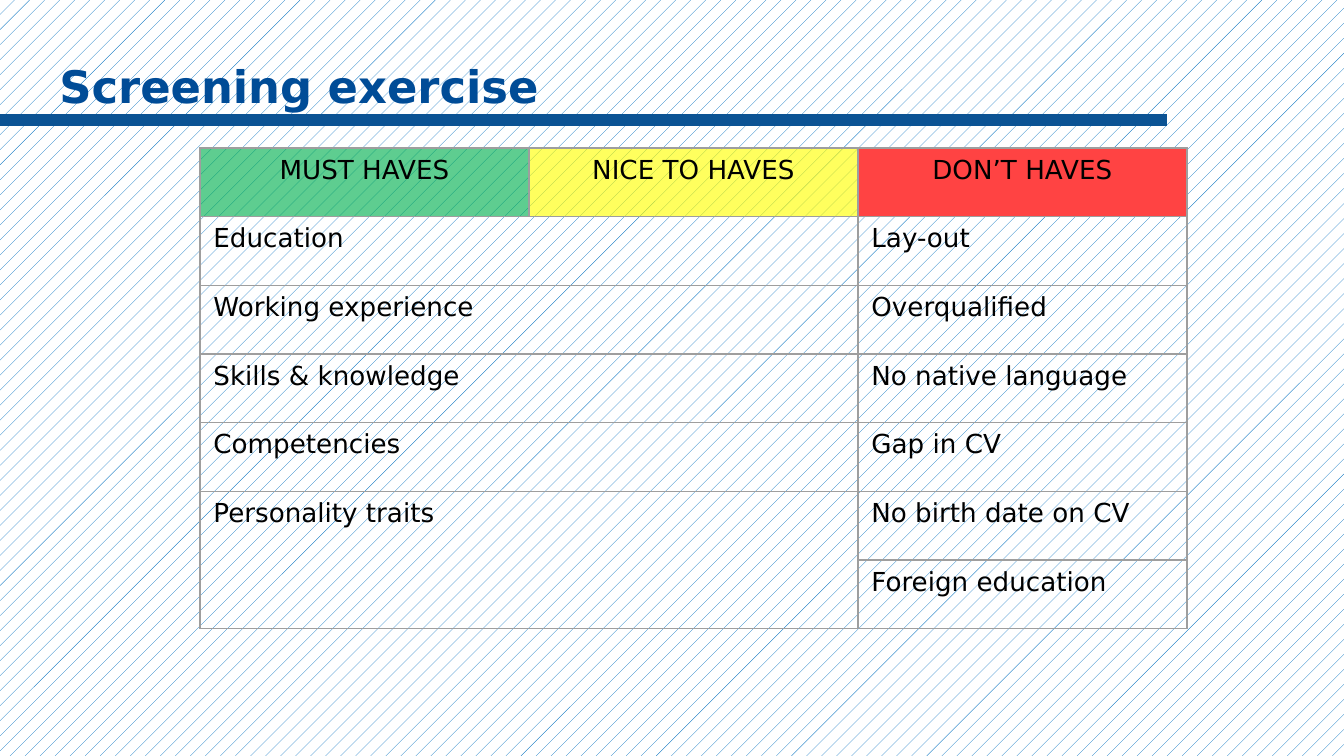
"""Build the screening exercise slide with its table of haves."""
import lxml.etree
import pptx
import pptx.dml.color
import pptx.enum.dml
import pptx.enum.shapes
import pptx.enum.text
import pptx.oxml.ns
import pptx.util

EMU_PER_PX = 914400 / 134.4
FONT = "DejaVu Sans"
COLOURS = {
    "title": "004C97",
    "rule": "0B5394",
    "hatch": "0070C0",
    "paper": "FFFFFF",
    "text": "000000",
    "border": "9E9E9E",
    "must": "00B050",
    "nice": "FFFF00",
    "dont": "FF4343",
}
HEADERS = [("MUST HAVES", "must", 63), ("NICE TO HAVES", "nice", 63), ("DON’T HAVES", "dont", 100)]
WANTED = ["Education", "Working experience", "Skills & knowledge", "Competencies", "Personality traits"]
UNWANTED = ["Lay-out", "Overqualified", "No native language", "Gap in CV", "No birth date on CV",
            "Foreign education"]


def px(length):
    """Turn px into EMU."""
    return pptx.util.Emu(round(length * EMU_PER_PX))


def rgb(name):
    """Look up a named colour."""
    return pptx.dml.color.RGBColor.from_string(COLOURS[name])


def add_xml(parent, tag, **attributes):
    """Append a drawing element to its parent."""
    element = lxml.etree.SubElement(parent, pptx.oxml.ns.qn(tag))
    for key, value in attributes.items():
        element.set(key, str(value))
    return element


def write(text_frame, text, size, colour, bold=False, align=pptx.enum.text.PP_ALIGN.LEFT):
    """Set one formatted paragraph."""
    text_frame.text = text
    paragraph = text_frame.paragraphs[0]
    paragraph.alignment = align
    font = paragraph.runs[0].font
    font.name, font.size, font.bold = FONT, pptx.util.Pt(size), bold
    font.color.rgb = rgb(colour)


def set_background(slide):
    """Give the slide its hatched background."""
    fill = slide.background.fill
    fill.patterned()
    fill.pattern = pptx.enum.dml.MSO_PATTERN.PERCENT_10
    fill.fore_color.rgb = rgb("hatch")
    fill.back_color.rgb = rgb("paper")


def add_rule(slide):
    """Draw the thick rule below the title."""
    rule = slide.shapes.add_connector(
        pptx.enum.shapes.MSO_CONNECTOR.STRAIGHT, px(0), px(120), px(1167), px(120))
    rule.line.color.rgb = rgb("rule")
    rule.line.width = pptx.util.Pt(6)
    add_xml(rule._element.spPr, "a:effectLst")


def set_title(slide, text):
    """Place and format the title placeholder."""
    title = slide.shapes.title
    title.left, title.top, title.width, title.height = px(46), px(43), px(1253), px(85)
    text_frame = title.text_frame
    text_frame.margin_left = text_frame.margin_right = pptx.util.Inches(0.1)
    text_frame.margin_top = text_frame.margin_bottom = pptx.util.Inches(0.1)
    text_frame.vertical_anchor = pptx.enum.text.MSO_ANCHOR.MIDDLE
    text_frame.auto_size = pptx.enum.text.MSO_AUTO_SIZE.NONE
    write(text_frame, text, 24, "title", bold=True)


def add_borders(cell):
    """Draw a thin line on all four sides of a cell."""
    properties = cell._tc.get_or_add_tcPr()
    for side in ("a:lnL", "a:lnR", "a:lnT", "a:lnB"):
        line = add_xml(properties, side, w=pptx.util.Pt(0.75))
        add_xml(add_xml(line, "a:solidFill"), "a:srgbClr", val=COLOURS["border"])


def fill_cell(cell, colour, opacity):
    """Fill a cell with a colour at a percentage of opacity."""
    cell.fill.solid()
    cell.fill.fore_color.rgb = rgb(colour)
    if opacity < 100:
        colour_element = cell._tc.tcPr.find(".//" + pptx.oxml.ns.qn("a:solidFill") + "[last()]/..")
        solid = cell._tc.tcPr.findall(pptx.oxml.ns.qn("a:solidFill"))[-1]
        add_xml(solid[0], "a:alpha", val=opacity * 1000)


def add_haves_table(slide):
    """Add the table of wanted and unwanted traits."""
    row_count = len(UNWANTED) + 1
    table = slide.shapes.add_table(
        row_count, len(HEADERS), px(200), px(148), px(987), px(481)).table
    table.first_row = table.horz_banding = False
    for cell in table.iter_cells():
        add_borders(cell)
        cell.fill.background()
    for column, (text, colour, opacity) in enumerate(HEADERS):
        cell = table.cell(0, column)
        fill_cell(cell, colour, opacity)
        write(cell.text_frame, text, 14, "text", align=pptx.enum.text.PP_ALIGN.CENTER)
    for row, text in enumerate(WANTED, 1):
        last_row = row_count - 1 if row == len(WANTED) else row
        table.cell(row, 0).merge(table.cell(last_row, 1))
        write(table.cell(row, 0).text_frame, text, 14, "text")
    for row, text in enumerate(UNWANTED, 1):
        write(table.cell(row, 2).text_frame, text, 14, "text")


def main():
    """Build and save the presentation."""
    presentation = pptx.Presentation()
    presentation.slide_width, presentation.slide_height = px(1344), px(756)
    slide = presentation.slides.add_slide(presentation.slide_layouts[5])
    set_background(slide)
    add_rule(slide)
    set_title(slide, "Screening exercise")
    add_haves_table(slide)
    presentation.save("out.pptx")


if __name__ == "__main__":
    main()
